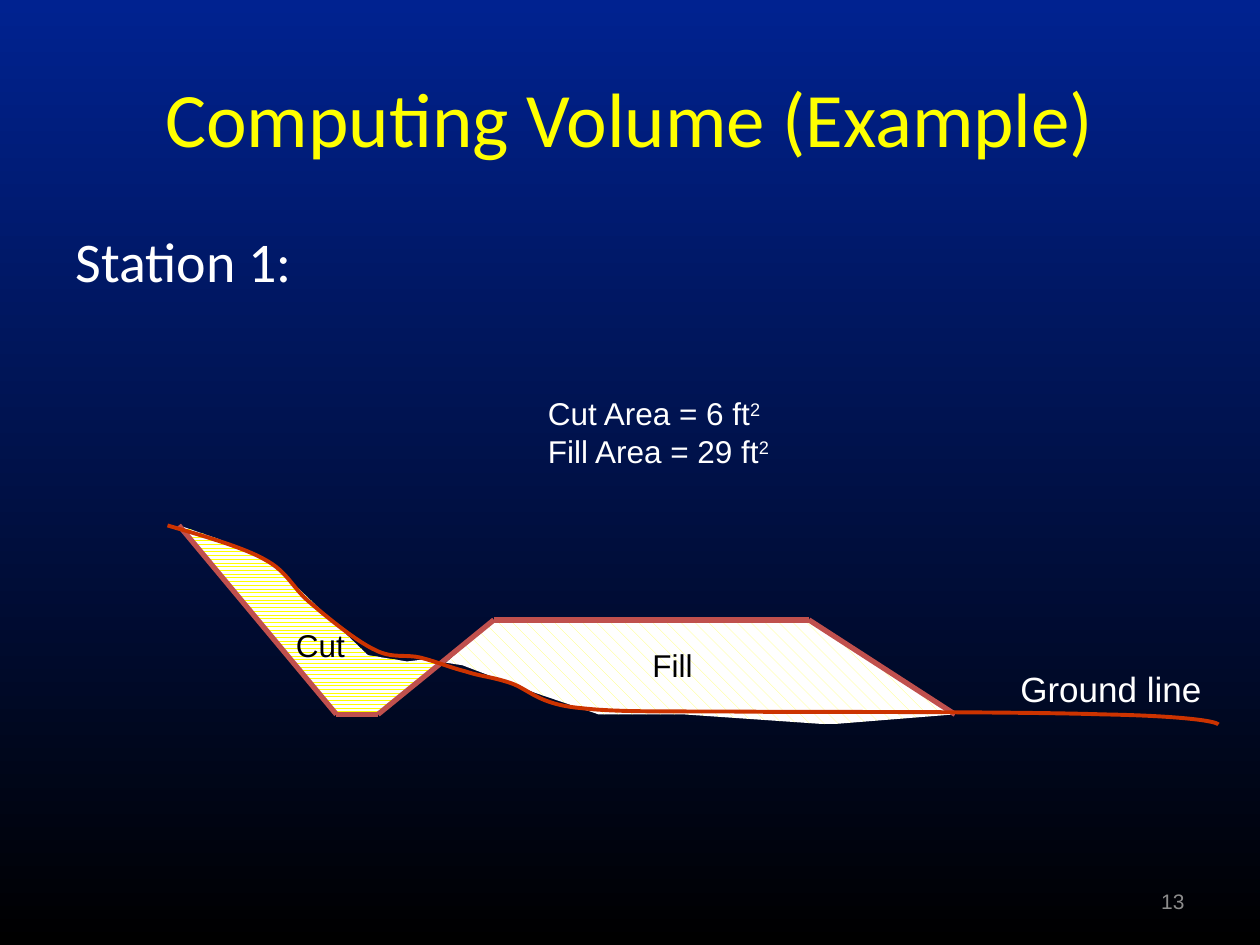
from itertools import pairwise

from lxml import etree
from pptx import Presentation
from pptx import util as u
from pptx.dml.color import RGBColor
from pptx.enum import dml, shapes, text
from pptx.oxml.ns import qn

WHITE, BLACK, YELLOW = "FFFFFF", "000000", "FFFF00"
SLOPE, GROUND, GREY = "C0504D", "CC3300", "8C8C8C"


def rgb(value):
    return RGBColor.from_string(value)


def inches(values):
    return [u.Inches(v) for v in values]


class Deck:
    font = "Arial"
    heading_font = "Calibri"

    def __init__(self):
        self.prs = Presentation()
        self.prs.slide_width, self.prs.slide_height = inches((10, 7.5))
        self.s = None

    def new_slide(self, top, bottom):
        self.s = self.prs.slides.add_slide(self.prs.slide_layouts[1])
        fill = self.s.background.fill
        fill.gradient()
        fill.gradient_angle = 270
        for stop, color in zip(fill.gradient_stops, (top, bottom)):
            stop.color.rgb = rgb(color)

    def run(self, p, words, size, color, font=None, raised=False):
        r = p.add_run()
        r.text = words
        r.font.size = u.Pt(size)
        r.font.name = font or self.font
        r.font.color.rgb = rgb(color)
        if raised:
            r.font._element.set("baseline", "30000")

    def placeholder(self, index, box, words, size, color):
        sp = self.s.placeholders[index]
        sp.left, sp.top, sp.width, sp.height = inches(box)
        p = sp.text_frame.paragraphs[0]
        self.run(p, words, size, color, self.heading_font)
        return p

    def title(self, box, words):
        p = self.placeholder(0, box, words, 44, YELLOW)
        p.alignment = text.PP_ALIGN.CENTER

    def body(self, box, words):
        p = self.placeholder(1, box, words, 32, WHITE)
        pPr = p._p.get_or_add_pPr()
        pPr.set("marL", str(u.Inches(0.38)))
        pPr.set("indent", str(u.Inches(-0.38)))
        etree.SubElement(pPr, qn("a:buNone"))

    def label(self, box, lines, size, color, align=None, anchor=text.MSO_ANCHOR.TOP):
        tf = self.s.shapes.add_textbox(*inches(box)).text_frame
        tf.word_wrap = True
        tf.vertical_anchor = anchor
        for i, (words, exponent) in enumerate(lines):
            p = tf.add_paragraph() if i else tf.paragraphs[0]
            p.alignment = align
            self.run(p, words, size, color)
            if exponent:
                self.run(p, exponent, size, color, raised=True)

    def outline(self, points, close):
        start, *rest = [inches(point) for point in points]
        builder = self.s.shapes.build_freeform(*start)
        builder.add_line_segments(rest, close=close)
        sp = builder.convert_to_shape()
        sp.shadow.inherit = False
        return sp

    def area(self, points, pattern, fore, back):
        sp = self.outline(points, True)
        sp.fill.patterned()
        sp.fill.pattern = pattern
        sp.fill.fore_color.rgb = rgb(fore)
        sp.fill.back_color.rgb = rgb(back)
        sp.line.fill.background()

    def curve(self, points, color, width):
        sp = self.outline(points, False)
        sp.fill.background()
        sp.line.color.rgb = rgb(color)
        sp.line.width = u.Pt(width)
        steps = list(sp._element.iter(qn("a:lnTo")))
        for i in range(0, len(steps), 3):
            first, *others = steps[i:i + 3]
            first.tag = qn("a:cubicBezTo")
            for step in others:
                first.append(step[0])
                step.getparent().remove(step)

    def line(self, start, end, color, width):
        c = self.s.shapes.add_connector(
            shapes.MSO_CONNECTOR.STRAIGHT, *inches(start + end))
        c.line.color.rgb = rgb(color)
        c.line.width = u.Pt(width)
        etree.SubElement(c._element.spPr, qn("a:effectLst"))


def main():
    deck = Deck()
    deck.new_slide("002290", BLACK)
    deck.title((0.5, 0.3, 9, 1.25), "Computing Volume (Example)")
    deck.body((0.5, 1.75, 9, 4.95), "Station 1:")
    deck.label((7.17, 6.95, 2.33, 0.4), [("13", "")], 12, GREY,
               text.PP_ALIGN.RIGHT, text.MSO_ANCHOR.MIDDLE)
    deck.label((8, 5.25, 2, 0.43), [("Ground line", "")], 20, WHITE)

    profile = [(1.42, 4.17), (2.67, 5.67), (3, 5.67),
               (3.92, 4.92), (6.42, 4.92), (7.58, 5.67)]
    top, ditch_left, ditch_right, road_left, road_right, toe = profile
    cut = [top, (1.74, 4.28), (2.16, 4.47), (2.92, 5.2), (3.23, 5.25),
           (3.4, 5.23), (3.47, 5.28), ditch_right, ditch_left]
    fill = [(3.54, 5.26), road_left, road_right, toe, (6.58, 5.75),
            (5.42, 5.67), (4.75, 5.67), (4.25, 5.5), (3.67, 5.28)]
    deck.area(cut, dml.MSO_PATTERN.ZIG_ZAG, YELLOW, WHITE)
    deck.area(fill, dml.MSO_PATTERN.SHINGLE, "FFFF66", WHITE)
    for start, end in pairwise(profile):
        deck.line(start, end, SLOPE, 3)

    ground = [
        (1.33, 4.17),
        (1.46, 4.21), (1.91, 4.33), (2.1, 4.44),
        (2.29, 4.54), (2.32, 4.67), (2.47, 4.79),
        (2.61, 4.91), (2.83, 5.09), (2.98, 5.16),
        (3.12, 5.23), (3.22, 5.19), (3.34, 5.22),
        (3.46, 5.25), (3.58, 5.3), (3.7, 5.33),
        (3.82, 5.37), (3.9, 5.37), (4.05, 5.42),
        (4.2, 5.47), (4.27, 5.59), (4.61, 5.62),
        (4.96, 5.66), (5.44, 5.64), (6.12, 5.65),
        (6.81, 5.65), (8.16, 5.65), (8.75, 5.67),
        (9.34, 5.68), (9.65, 5.72), (9.67, 5.75),
    ]
    deck.curve(ground, GROUND, 2.25)

    deck.label((2.25, 4.92, 0.75, 0.5), [("Cut", "")], 18, BLACK)
    deck.label((5.08, 5.08, 1.5, 0.5), [("Fill", "")], 18, BLACK)
    areas = [("Cut Area = 6 ft", "2"), ("Fill Area = 29 ft", "2")]
    deck.label((4.25, 3.08, 4.25, 0.71), areas, 18, WHITE)
    deck.prs.save("out.pptx")


if __name__ == "__main__":
    main()
